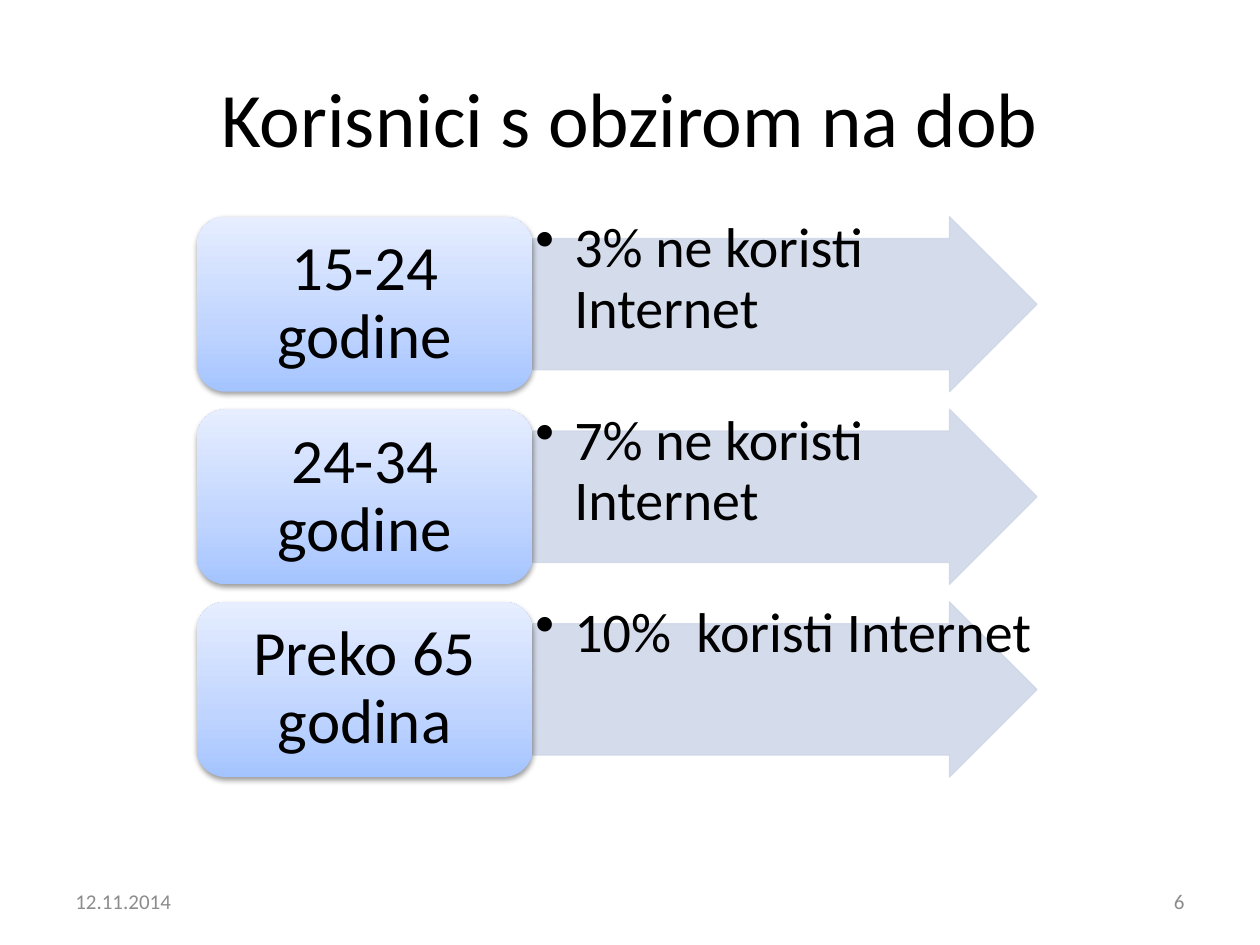
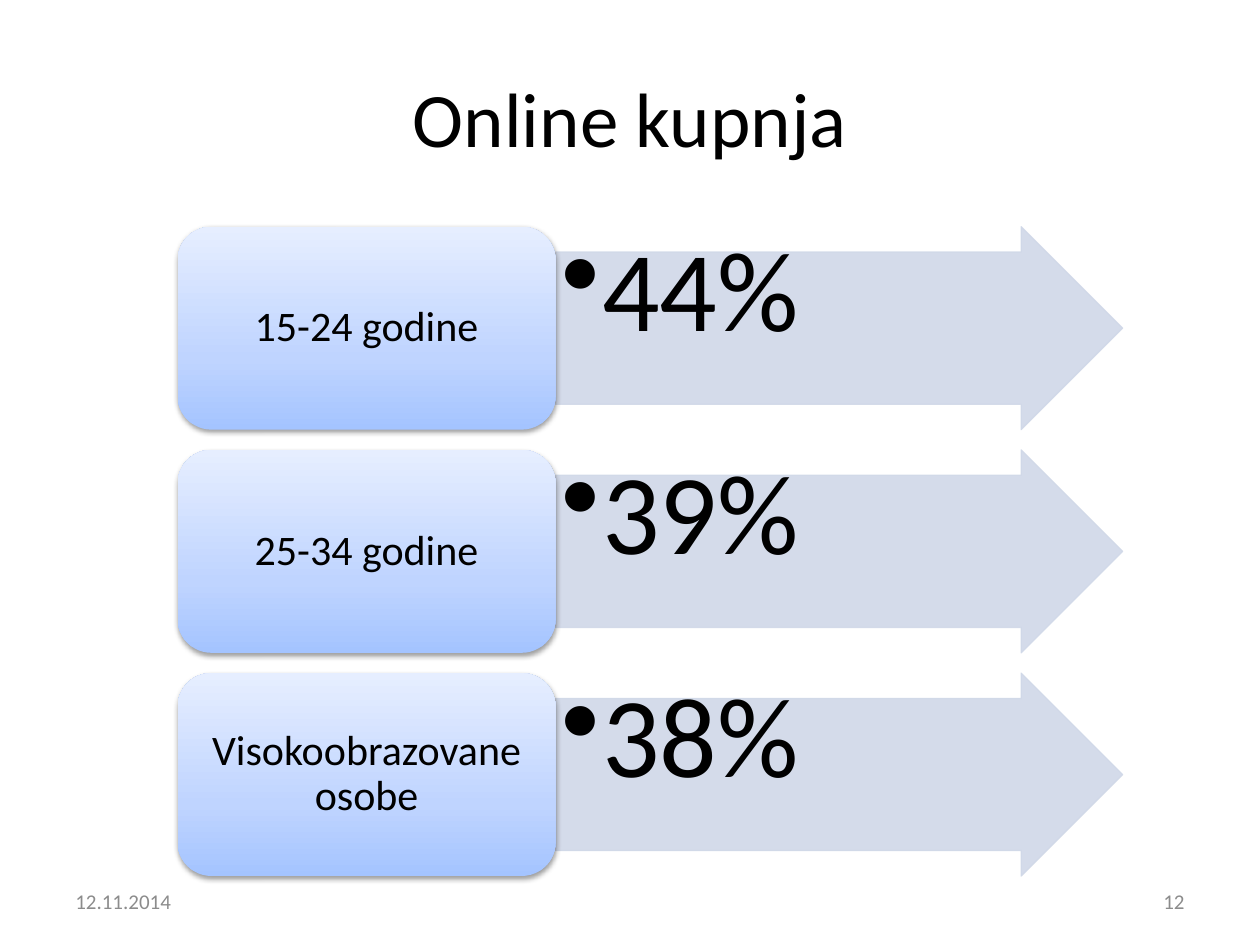
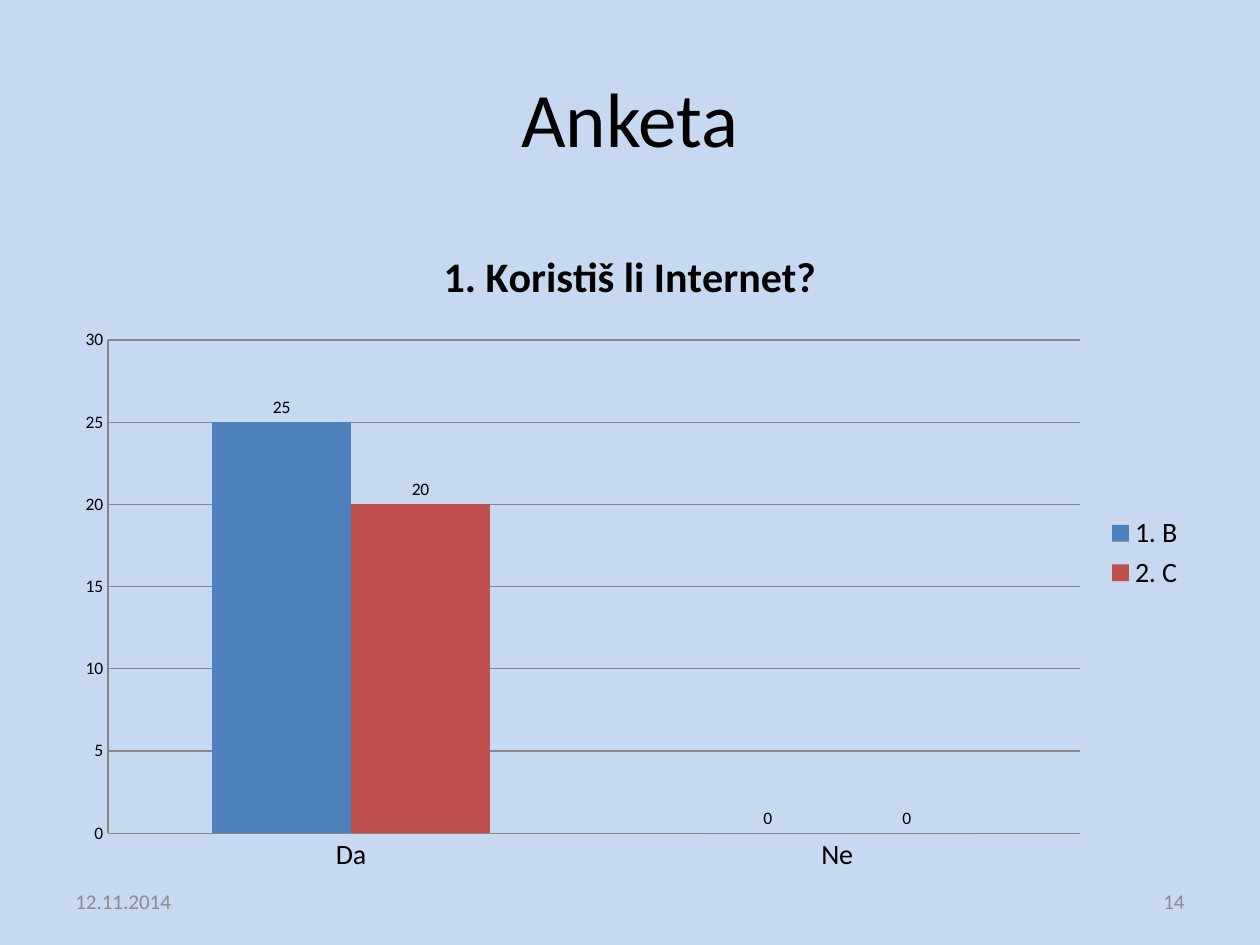
from pptx import Presentation
from pptx.chart.data import CategoryChartData
from pptx.dml.color import RGBColor
from pptx.enum.chart import XL_CHART_TYPE, XL_LABEL_POSITION, XL_LEGEND_POSITION, XL_TICK_MARK
from pptx.enum.shapes import MSO_SHAPE
from pptx.enum.text import MSO_ANCHOR, PP_ALIGN
from pptx.oxml import parse_xml
from pptx.oxml.ns import nsdecls, qn
from pptx.util import Inches, Pt

DATE = "12.11.2014"
INK, FOOTER, ARROW, RULE = "000000", "8C8C8C", "D0D8E8", "878787"
WHITE, PALE_BLUE = "FFFFFF", "C6D9F1"
LABEL_STOPS = [(0, "A4C4FF"), (35, "BFD4FF"), (100, "E6EEFF")]
SERIES_COLORS = ["4F81BD", "C0504D"]


def paint(code):
    return RGBColor.from_string(code)


def apply(target, formats):
    for name, value in formats.items():
        setattr(target, name, value)


def element(tag, attributes="", content=""):
    return parse_xml(f"<a:{tag} {nsdecls('a')} {attributes}>{content}</a:{tag}>")


class SlideBuilder:
    font = "Calibri"

    def __init__(self):
        self.deck = Presentation()
        apply(self.deck, {"slide_width": Inches(10), "slide_height": Inches(7.5)})
        self.page = None

    def place(self, left, top, width, height):
        column, row = self.deck.slide_width / 100, self.deck.slide_height / 100
        return [round(n) for n in (left * column, top * row, width * column, height * row)]

    def style(self, font, size, color=INK, bold=False):
        apply(font, {"name": self.font, "size": Pt(size), "bold": bold})
        font.color.rgb = paint(color)

    def put_text(self, box, text, size, color=INK, align=PP_ALIGN.LEFT,
                 anchor=MSO_ANCHOR.MIDDLE, spacing=1.0, inset=None):
        frame = box.text_frame
        apply(frame, {"word_wrap": True, "vertical_anchor": anchor})
        if inset is not None:
            sides = ("left", "top", "right", "bottom")
            apply(frame, {f"margin_{side}": Inches(inset) for side in sides})
        para = frame.paragraphs[0]
        apply(para, {"alignment": align, "line_spacing": spacing})
        span = para.add_run()
        span.text = text
        self.style(span.font, size, color)
        return para

    def start(self, title, number, background=WHITE):
        self.page = self.deck.slides.add_slide(self.deck.slide_layouts[5])
        fill = self.page.background.fill
        fill.solid()
        fill.fore_color.rgb = paint(background)
        heading = self.page.shapes.title
        bounds = self.place(5, 4, 90, 16.67)
        apply(heading, dict(zip(("left", "top", "width", "height"), bounds)))
        self.put_text(heading, title, 44, align=PP_ALIGN.CENTER)
        self.footer(5, DATE, PP_ALIGN.LEFT)
        self.footer(71.7, str(number), PP_ALIGN.RIGHT)

    def footer(self, left, text, align):
        box = self.page.shapes.add_textbox(*self.place(left, 92.67, 23.3, 5.33))
        self.put_text(box, text, 12, FOOTER, align)

    def arrow(self, bounds, text, size, inset):
        arrow = self.page.shapes.add_shape(MSO_SHAPE.RIGHT_ARROW, *bounds)
        arrow.adjustments[0] = 0.75
        arrow.shadow.inherit = False
        arrow.fill.solid()
        arrow.fill.fore_color.rgb = paint(ARROW)
        arrow.line.color.rgb = paint(ARROW)
        arrow.line.width = Pt(0.75)
        for color in arrow._element.spPr.iter(qn("a:srgbClr")):
            color.append(element("alpha", 'val="90000"'))
        box = self.page.shapes.add_textbox(*bounds)
        para = self.put_text(box, text, size, anchor=MSO_ANCHOR.TOP, spacing=0.9, inset=inset)
        para.level = 1
        properties = para._p.get_or_add_pPr()
        properties.set("marL", str(Inches(0.31)))
        properties.set("indent", str(-Inches(0.31)))
        properties.append(element("buChar", 'char="•"'))

    def label(self, bounds, text, size):
        label = self.page.shapes.add_shape(MSO_SHAPE.ROUNDED_RECTANGLE, *bounds)
        label.line.fill.background()
        label.fill.gradient()
        label.fill.gradient_angle = 90
        stops = label._element.spPr.find(".//" + qn("a:gsLst"))
        for stop in list(stops):
            stops.remove(stop)
        for position, color in LABEL_STOPS:
            stops.append(element("gs", f'pos="{position * 1000}"', f'<a:srgbClr val="{color}"/>'))
        label.shadow.inherit = False
        label._element.spPr.find(qn("a:effectLst")).append(element(
            "outerShdw", 'blurRad="40000" dist="20000" dir="5400000" rotWithShape="0"',
            '<a:srgbClr val="000000"><a:alpha val="38000"/></a:srgbClr>'))
        self.put_text(label, text, size, align=PP_ALIGN.CENTER, spacing=0.9)

    def arrow_list(self, rows, left, top, width, height, label_size, arrow_size, inset):
        label_width = 0.4 * width
        for index, (name, finding) in enumerate(rows):
            row_top = top + 1.1 * height * index
            self.arrow(self.place(left + label_width, row_top, width - label_width, height),
                       finding, arrow_size, inset)
            self.label(self.place(left, row_top, label_width, height), name, label_size)

    def column_chart(self, title, categories, series):
        data = CategoryChartData()
        data.categories = categories
        for name, values in series.items():
            data.add_series(name, values)
        chart = self.page.shapes.add_chart(
            XL_CHART_TYPE.COLUMN_CLUSTERED, *self.place(5, 23.33, 90, 70.4), data).chart
        self.style(chart.font, 10)
        apply(chart, {"has_title": True, "has_legend": True})
        heading = chart.chart_title.text_frame
        heading.text = title
        self.style(heading.paragraphs[0].runs[0].font, 24, bold=True)
        apply(chart.legend, {"position": XL_LEGEND_POSITION.RIGHT, "include_in_layout": False})
        self.style(chart.legend.font, 16)

        category, value = chart.category_axis, chart.value_axis
        apply(value, {"minimum_scale": 0, "maximum_scale": 30, "major_unit": 5,
                      "has_major_gridlines": True})
        for axis, size in ((category, 16), (value, 10)):
            axis.major_tick_mark = XL_TICK_MARK.NONE
            self.style(axis.tick_labels.font, size)
        for ruled in (category, value, value.major_gridlines):
            ruled.format.line.color.rgb = paint(RULE)
            ruled.format.line.width = Pt(0.75)

        plot = chart.plots[0]
        apply(plot, {"gap_width": 150, "overlap": 0, "vary_by_categories": False,
                     "has_data_labels": True})
        apply(plot.data_labels, {"show_value": True, "position": XL_LABEL_POSITION.OUTSIDE_END})
        self.style(plot.data_labels.font, 10)
        for columns, color in zip(plot.series, SERIES_COLORS):
            columns.format.fill.solid()
            columns.format.fill.fore_color.rgb = paint(color)


def main():
    builder = SlideBuilder()

    builder.start("Korisnici s obzirom na dob", 6)
    builder.arrow_list(
        [("15-24 godine", "3% ne koristi Internet"),
         ("24-34 godine", "7% ne koristi Internet"),
         ("Preko 65 godina", "10%  koristi Internet")],
        left=15.6, top=22.93, width=66.7, height=18.53,
        label_size=36, arrow_size=32, inset=0.02)

    builder.start("Online kupnja", 12)
    builder.arrow_list(
        [("15-24 godine", "44%"), ("25-34 godine", "39%"), ("Visokoobrazovane osobe", "38%")],
        left=14.1, top=24, width=75, height=21.47,
        label_size=24, arrow_size=65, inset=0.05)

    builder.start("Anketa", 14, PALE_BLUE)
    builder.column_chart("1. Koristiš li Internet?", ["Da", "Ne"],
                         {"1. B": (25, 0), "2. C": (20, 0)})

    builder.deck.save("out.pptx")


if __name__ == "__main__":
    main()
